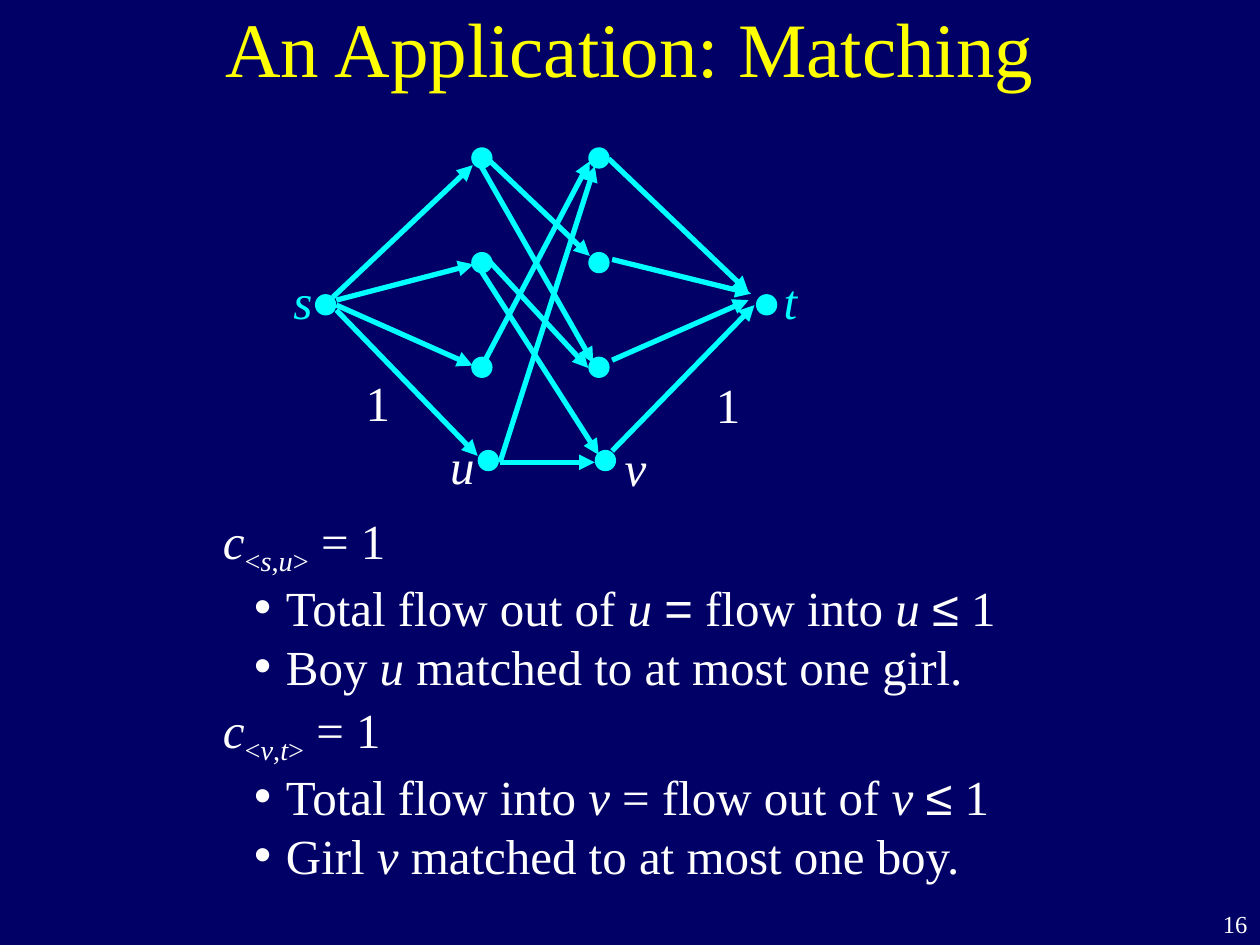
from dataclasses import dataclass

import pptx
import pptx.dml.color
import pptx.enum.shapes
import pptx.enum.text
import pptx.oxml
import pptx.oxml.ns
import pptx.util

Cm, Pt = pptx.util.Cm, pptx.util.Pt
ALIGN, ANCHOR = pptx.enum.text.PP_ALIGN, pptx.enum.text.MSO_ANCHOR
SERIF, SANS = "Times New Roman", "Arial"
NAVY, CYAN, YELLOW, WHITE = "000066", "00FFFF", "FFFF00", "FFFFFF"
DOT = 0.43


@dataclass
class Run:
    text: str
    italic: bool = False
    sub: bool = False
    font: str = SERIF


@dataclass
class Label:
    text: str
    x: float
    y: float
    w: float
    color: str = WHITE


@dataclass
class Edge:
    x1: float
    y1: float
    x2: float
    y2: float


@dataclass
class Condition:
    """A capacity line and the bullets that follow from it."""
    y: float
    ends: tuple[str, str]
    bullets: list[list[Run]]


# Dot corners: three even rows, then the lower pair u and v
DOTS = [(x, 2.97 + 2.11 * row) for row in range(3) for x in (9.5, 11.86)]
DOTS += [(9.63, 9.07), (11.99, 9.07), (6.35, 5.93), (15.24, 5.93)]

SOURCE_EDGES = [
    Edge(6.71, 5.99, 9.53, 3.33),
    Edge(6.78, 6.05, 9.55, 5.33),
    Edge(6.78, 6.15, 9.53, 7.37),
    Edge(6.78, 6.25, 9.63, 9.19),
]
PAIR_EDGES = [
    Edge(9.7, 3.35, 11.96, 7.32),
    Edge(9.86, 5.26, 11.86, 7.42),
    Edge(9.78, 7.26, 11.89, 3.25),
    Edge(10.08, 9.32, 11.99, 9.32),
    Edge(9.88, 3.25, 11.89, 5.16),
    Edge(9.7, 5.46, 12.07, 9.17),
    Edge(10.08, 9.32, 11.99, 3.35),
]
SINK_EDGES = [
    Edge(12.27, 3.2, 15.09, 5.89),
    Edge(12.34, 5.23, 15.14, 5.92),
    Edge(12.34, 7.26, 15.09, 6.05),
    Edge(12.34, 9.09, 15.21, 6.15),
]
LABELS = [
    Label("s", 5.66, 5.33, 0.89, CYAN),
    Label("t", 15.54, 5.33, 0.79, CYAN),
    Label("1", 7.11, 7.39, 1.02),
    Label("1", 14.17, 7.42, 1.02),
    Label("u", 8.81, 8.66, 1.02),
    Label("v", 12.34, 8.69, 0.94),
]
CONDITIONS = [
    Condition(10.16, ("s", "u"), [
        [Run("Total flow out of "), Run("u ", True), Run("=", font=SANS),
         Run(" flow into "), Run("u ", True), Run("≤", font=SANS), Run(" 1")],
        [Run("Boy "), Run("u", True), Run(" matched to at most one girl.")],
    ]),
    Condition(13.97, ("v", "t"), [
        [Run("Total flow into "), Run("v ", True), Run("= flow out of "),
         Run("v ", True), Run("≤", font=SANS), Run(" 1")],
        [Run("Girl "), Run("v ", True), Run("matched to at most one boy.")],
    ]),
]


def rgb(color: str) -> pptx.dml.color.RGBColor:
    return pptx.dml.color.RGBColor.from_string(color)


def place(sp, x: float, y: float, w: float, h: float) -> None:
    box = {"left": x, "top": y, "width": w, "height": h}
    for name, value in box.items():
        setattr(sp, name, Cm(value))


def add_run(p, run: Run, size: float, color: str) -> None:
    r = p.add_run()
    r.text = run.text
    fmt = {"name": run.font, "size": Pt(size), "italic": run.italic}
    for name, value in fmt.items():
        setattr(r.font, name, value)
    r.font.color.rgb = rgb(color)
    if run.sub:
        r.font._element.set("baseline", "-25000")


def add_text(slide, label: Label, h: float, size: float, align, italic: bool) -> None:
    sp = slide.shapes.add_textbox(Cm(label.x), Cm(label.y), Cm(label.w), Cm(h))
    sp.text_frame.word_wrap = False
    p = sp.text_frame.paragraphs[0]
    p.alignment = align
    add_run(p, Run(label.text, italic), size, label.color)


def add_dot(slide, x: float, y: float) -> None:
    sp = slide.shapes.add_shape(pptx.enum.shapes.MSO_SHAPE.OVAL,
                                Cm(x), Cm(y), Cm(DOT), Cm(DOT))
    sp.shadow.inherit = False
    sp.fill.solid()
    sp.fill.fore_color.rgb = rgb(CYAN)
    sp.line.fill.background()


def add_arrow(slide, e: Edge) -> None:
    sp = slide.shapes.add_connector(pptx.enum.shapes.MSO_CONNECTOR.STRAIGHT,
                                    Cm(e.x1), Cm(e.y1), Cm(e.x2), Cm(e.y2))
    sp.line.color.rgb = rgb(CYAN)
    sp.line.width = Pt(3)
    ln = sp.line._get_or_add_ln()
    ln.append(pptx.oxml.parse_xml(
        f'<a:tailEnd {pptx.oxml.ns.nsdecls("a")} type="triangle"/>'))
    ln.addnext(pptx.oxml.parse_xml(f'<a:effectLst {pptx.oxml.ns.nsdecls("a")}/>'))


def set_bullet(p, bullet: str, margin: float, indent: float) -> None:
    """Give the paragraph a bullet character, or none if it is empty."""
    p_pr = p._p.get_or_add_pPr()
    p_pr.set("marL", str(Cm(margin)))
    p_pr.set("indent", str(Cm(indent)))
    tag = f'buChar char="{bullet}"' if bullet else "buNone"
    p_pr.append(pptx.oxml.parse_xml(
        f'<a:{tag.split()[0]} {pptx.oxml.ns.nsdecls("a")}{tag[len(tag.split()[0]):]}/>'))


def fill_condition(sp, cond: Condition) -> None:
    place(sp, 4.24, cond.y, 16.5, 3.81)
    tf = sp.text_frame
    tf.word_wrap = False
    tf.auto_size = pptx.enum.text.MSO_AUTO_SIZE.NONE
    start, end = cond.ends
    capacity = [Run("c", True), Run("<", sub=True), Run(start, True, True),
                Run(",", sub=True), Run(end, True, True), Run(">", sub=True),
                Run(" = 1")]
    for i, runs in enumerate([capacity, *cond.bullets]):
        p = tf.add_paragraph() if i else tf.paragraphs[0]
        p.level = min(i, 1)
        p.space_before = Pt(0)
        if i:
            set_bullet(p, "•", 1.27, -0.64)
        else:
            set_bullet(p, "", 0, 0)
        for run in runs:
            add_run(p, run, 28, WHITE)


def main() -> None:
    prs = pptx.Presentation()
    prs.slide_width, prs.slide_height = Cm(25.4), Cm(19.05)
    slide = prs.slides.add_slide(prs.slide_layouts.get_by_name("Two Content"))
    slide.background.fill.solid()
    slide.background.fill.fore_color.rgb = rgb(NAVY)

    title, *bodies = slide.placeholders
    place(title, 1.9, -0.64, 21.6, 3.18)
    title.text_frame.vertical_anchor = ANCHOR.MIDDLE
    add_run(title.text_frame.paragraphs[0], Run("An Application: Matching"), 44, YELLOW)
    for sp, cond in zip(bodies, CONDITIONS):
        fill_condition(sp, cond)

    for edge in PAIR_EDGES + SOURCE_EDGES + SINK_EDGES:
        add_arrow(slide, edge)
    for x, y in DOTS:
        add_dot(slide, x, y)
    for label in LABELS:
        add_text(slide, label, 1.45, 28, ALIGN.CENTER, label.text.isalpha())
    add_text(slide, Label("16", 24.13, 18.21, 1.27), 0.84, 14, ALIGN.RIGHT, False)
    prs.save("out.pptx")


if __name__ == "__main__":
    main()
